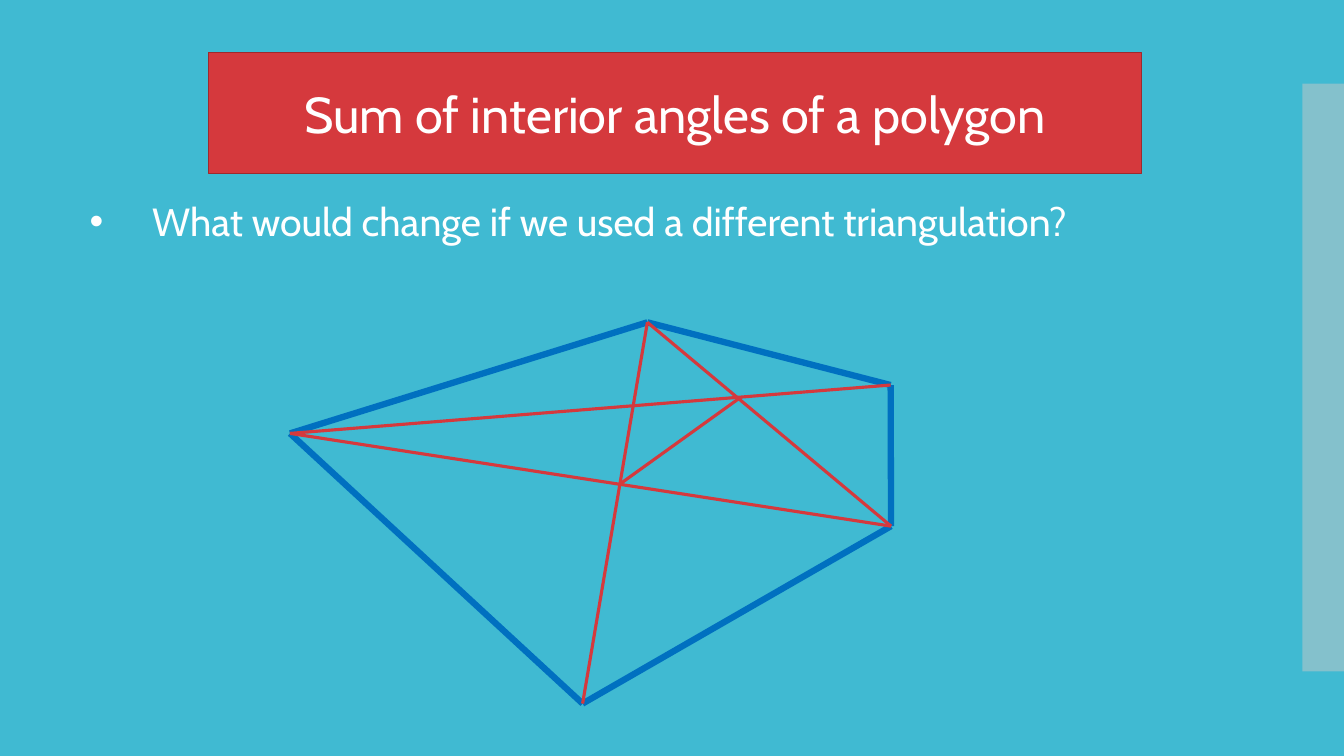
from lxml.etree import SubElement
from pptx import Presentation
from pptx.dml.color import RGBColor
from pptx.enum.shapes import MSO_CONNECTOR as LINK, MSO_SHAPE as SHAPE
from pptx.enum.text import MSO_ANCHOR as ANCHOR, MSO_AUTO_SIZE as FIT, PP_ALIGN as ALIGN
from pptx.oxml.ns import qn
from pptx.util import Inches, Pt

COLORS = {"back": "40BAD2", "red": "D5393D", "edge": "9E2A2D",
          "blue": "0070C0", "grey": "C8C8C8", "white": "FFFFFF"}

# Points are percentages of the slide's width and height.
POINTS = {"left": (21.58, 57.33), "top": (48.17, 42.64), "upper": (66.27, 50.93),
          "lower": (66.3, 69.6), "bottom": (43.35, 93.07),
          "low cross": (46.05, 64.13), "high cross": (55.13, 52.53)}
CORNERS = ["left", "top", "upper", "lower", "bottom"]
CUTS = [("left", "upper"), ("left", "lower"), ("bottom", "top"),
        ("top", "lower"), ("low cross", "high cross")]


def color(name):
    return RGBColor.from_string(COLORS[name])


class Board:
    """Draws on one slide; all places are percentages of its size."""
    font = "Cabin"

    def __init__(self, deck):
        self.wide, self.high = deck.slide_width, deck.slide_height
        self.slide = deck.slides.add_slide(deck.slide_layouts[5])
        self.shapes = self.slide.shapes
        fill = self.slide.background.fill
        fill.solid()
        fill.fore_color.rgb = color("back")

    def spot(self, x, y):
        return round(self.wide * x / 100), round(self.high * y / 100)

    def label(self, frame, text, size, align):
        frame.word_wrap = True
        frame.text = text
        para = frame.paragraphs[0]
        para.alignment = align
        font = para.runs[0].font
        font.name, font.size = self.font, Pt(size)
        font.color.rgb = color("white")
        return para

    def title(self, text, x, y, w, h):
        box = self.shapes.title
        box.left, box.top = self.spot(x, y)
        box.width, box.height = self.spot(w, h)
        box.fill.solid()
        box.fill.fore_color.rgb = color("red")
        box.line.color.rgb = color("edge")
        box.line.width = Pt(0.85)
        frame = box.text_frame
        frame.auto_size = FIT.NONE
        frame.vertical_anchor = ANCHOR.MIDDLE
        self.label(frame, text, 36, ALIGN.CENTER)

    def bullet(self, text, x, y, w, h):
        box = self.shapes.add_textbox(*self.spot(x, y), *self.spot(w, h))
        para = self.label(box.text_frame, text, 28, ALIGN.LEFT)
        box.text_frame.auto_size = FIT.SHAPE_TO_FIT_TEXT
        props = para._p.get_or_add_pPr()
        props.set("marL", str(Inches(0.62)))
        props.set("indent", str(-Inches(0.62)))
        SubElement(props, qn("a:buFont"), typeface="Arial")
        SubElement(props, qn("a:buChar"), char="•")

    def bar(self, x, y, w, h):
        """Half-transparent strip."""
        box = self.shapes.add_shape(SHAPE.RECTANGLE, *self.spot(x, y), *self.spot(w, h))
        box.shadow.inherit = False
        box.fill.solid()
        box.fill.fore_color.rgb = color("grey")
        box.line.fill.background()
        tint = box._element.spPr.find(qn("a:solidFill"))[0]
        SubElement(tint, qn("a:alpha"), val="50000")

    def line(self, start, end, shade, width):
        link = self.shapes.add_connector(
            LINK.STRAIGHT, *self.spot(*POINTS[start]), *self.spot(*POINTS[end]))
        link.line.color.rgb = color(shade)
        link.line.width = Pt(width)
        SubElement(link._element.spPr, qn("a:effectLst"))


def main():
    deck = Presentation()
    deck.slide_width, deck.slide_height = Inches(13.33), Inches(7.5)
    board = Board(deck)
    board.bar(96.9, 11.07, 3.1, 77.73)
    board.title("Sum of interior angles of a polygon", 15.53, 6.93, 69.4, 16)
    board.bullet("What would change if we used a different triangulation?",
                 5.93, 25.47, 88.67, 7.6)
    for start, end in zip(CORNERS, CORNERS[1:] + CORNERS[:1]):
        board.line(start, end, "blue", 4.5)
    for start, end in CUTS:
        board.line(start, end, "red", 2.25)
    deck.save("out.pptx")


if __name__ == "__main__":
    main()
